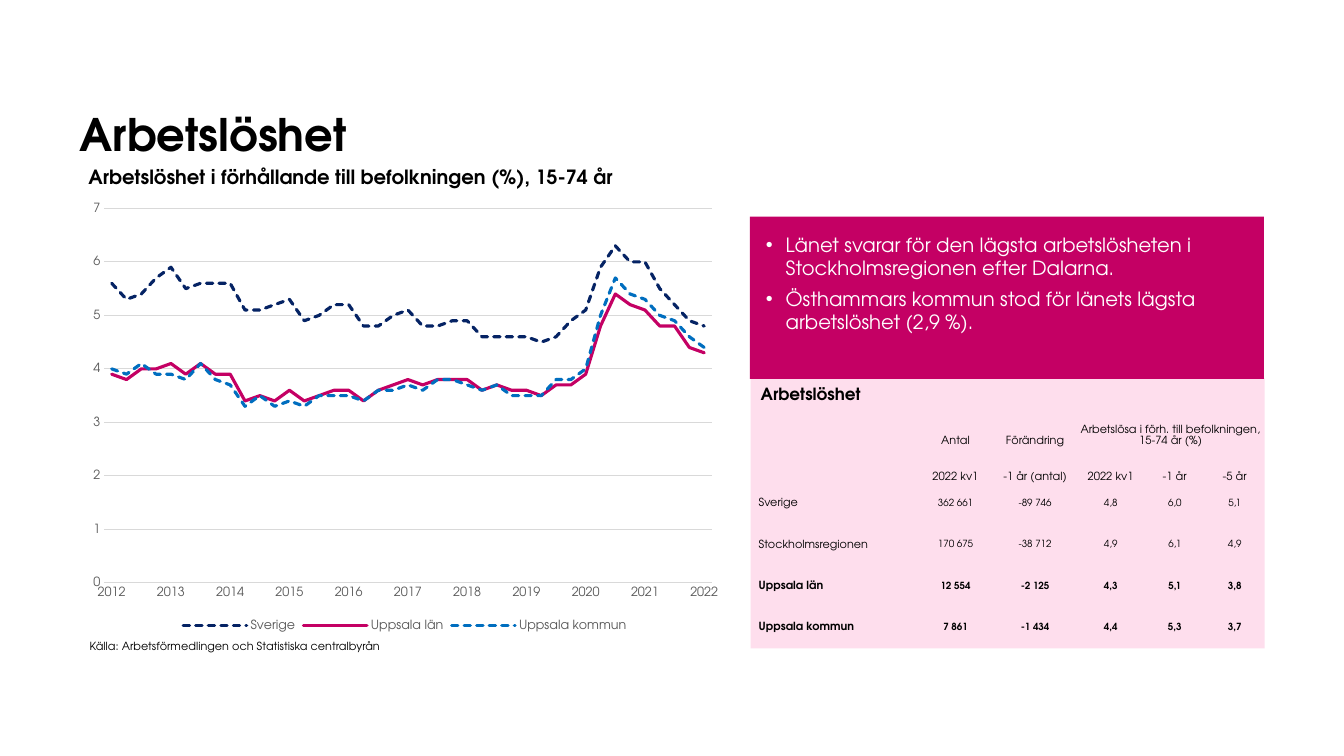
from pptx import Presentation
from pptx.chart.data import CategoryChartData
from pptx.dml.color import RGBColor
from pptx.enum.chart import XL_CHART_TYPE as ChartType, XL_LEGEND_POSITION as LegendPosition
from pptx.enum.chart import XL_TICK_MARK as TickMark
from pptx.enum.dml import MSO_LINE as Dash
from pptx.enum.shapes import MSO_SHAPE as Shape
from pptx.enum.text import MSO_ANCHOR as Anchor, PP_ALIGN as Align
from pptx.oxml import parse_xml
from pptx.oxml.ns import nsdecls, qn
from pptx.util import Cm, Pt

FONT = "TeX Gyre Adventor"
COLORS = {
    "black": "000000", "white": "FFFFFF", "grey": "595959", "grid": "D9D9D9",
    "magenta": "C40064", "pink": "FEDEED", "navy": "052364", "blue": "006EBF",
}


def style_font(font, size, color="black", bold=False):
    font.name = FONT
    font.size = Pt(size)
    font.bold = bold
    font.color.rgb = RGBColor.from_string(COLORS[color])


def add_label(left, top, width, height, text, size, bold=False):
    box = slide.shapes.add_textbox(Cm(left), Cm(top), Cm(width), Cm(height))
    box.text_frame.word_wrap = True
    box.text_frame.text = text
    style_font(box.text_frame.paragraphs[0].runs[0].font, size, bold=bold)
    return box.text_frame


presentation = Presentation()
presentation.slide_width = Cm(33.87)
presentation.slide_height = Cm(19.05)
slide = presentation.slides.add_slide(presentation.slide_layouts[6])

# Title
title = add_label(2.01, 0.94, 23.42, 3.1, "Arbetslöshet", 32, bold=True)
title.vertical_anchor = Anchor.BOTTOM
title.margin_left = title.margin_right = title.margin_top = title.margin_bottom = 0

# Panels: pink behind the table, magenta behind the bullets
panels = []
for left, top, height, color in [(18.92, 9.53, 6.81, "pink"), (18.9, 5.46, 4.09, "magenta")]:
    panel = slide.shapes.add_shape(Shape.RECTANGLE, Cm(left), Cm(top), Cm(12.95), Cm(height))
    panel.shadow.inherit = False
    panel.fill.solid()
    panel.fill.fore_color.rgb = RGBColor.from_string(COLORS[color])
    panel.line.fill.background()
    panels.append(panel)

# Bullets
bullets = [
    "Länet svarar för den lägsta arbetslösheten i Stockholmsregionen efter Dalarna.",
    "Östhammars kommun stod för länets lägsta arbetslöshet (2,9 %).",
]
frame = panels[1].text_frame
frame.word_wrap = True
frame.vertical_anchor = Anchor.TOP
frame.margin_left = frame.margin_right = frame.margin_top = frame.margin_bottom = Cm(0.4)
for index, text in enumerate(bullets):
    paragraph = frame.add_paragraph() if index else frame.paragraphs[0]
    paragraph.text = text
    paragraph.alignment = Align.LEFT
    paragraph.space_before = Pt(5 if index else 0)
    properties = paragraph._p.get_or_add_pPr()
    properties.set("marL", str(Cm(0.5)))
    properties.set("indent", str(-Cm(0.5)))
    properties.append(parse_xml(f'<a:buFont {nsdecls("a")} typeface="Arial"/>'))
    properties.append(parse_xml(f'<a:buChar {nsdecls("a")} char="•"/>'))
    style_font(paragraph.runs[0].font, 14, "white")

# Headings and source
add_label(18.92, 9.55, 4, 0.76, "Arbetslöshet", 12, bold=True)
add_label(1.98, 4.03, 15.5, 0.85,
          "Arbetslöshet i förhållande till befolkningen (%), 15-74 år", 14, bold=True)
add_label(2.01, 15.98, 9, 0.61, "Källa: Arbetsförmedlingen och Statistiska centralbyrån", 8)

# Table
rows = [
    ["", "Antal", "Förändring", "Arbetslösa i förh. till befolkningen, 15-74 år (%)", "", ""],
    ["", "2022 kv1", "-1 år (antal)", "2022 kv1", "-1 år", "-5 år"],
    ["Sverige", "362 661", "-89 746", "4,8", "6,0", "5,1"],
    ["Stockholmsregionen", "170 675", "-38 712", "4,9", "6,1", "4,9"],
    ["Uppsala län", "12 554", "-2 125", "4,3", "5,1", "3,8"],
    ["Uppsala kommun", "7 861", "-1 434", "4,4", "5,3", "3,7"],
]
column_widths = [4.22, 1.88, 2.13, 1.68, 1.55, 1.47]
table = slide.shapes.add_table(len(rows), len(column_widths), Cm(18.92), Cm(10.34),
                               Cm(12.93), Cm(5.98)).table
table.first_row = table.horz_banding = False
# Style without borders
table._tbl.tblPr.find(qn("a:tableStyleId")).text = "{2D5ABB26-0587-4C30-8999-92F81FD0307C}"
for column, width in zip(table.columns, column_widths):
    column.width = Cm(width)
table.cell(0, 3).merge(table.cell(0, 5))
for row_index, row in enumerate(rows):
    is_header = row_index < 2
    table.rows[row_index].height = Cm(0.91 if is_header else 1.04)
    for column_index, text in enumerate(row):
        cell = table.cell(row_index, column_index)
        cell.fill.background()
        cell.vertical_anchor = Anchor.BOTTOM if is_header else Anchor.MIDDLE
        cell.margin_left = Cm(0.03 if column_index else 0.2)
        cell.margin_right = cell.margin_top = Cm(0.03)
        cell.margin_bottom = 0
        if not text:
            continue
        cell.text_frame.text = text
        paragraph = cell.text_frame.paragraphs[0]
        paragraph.alignment = Align.CENTER if column_index else Align.LEFT
        size = 8 if is_header or column_index == 0 else 7
        style_font(paragraph.runs[0].font, size, bold=row_index >= 4)

# Chart: quarterly values, the first quarter of each year labelled
series_styles = [
    ("Sverige", "navy", Dash.SQUARE_DOT,
     [5.6, 5.3, 5.4, 5.7, 5.9, 5.5, 5.6, 5.6, 5.6, 5.1, 5.1, 5.2, 5.3, 4.9, 5, 5.2, 5.2, 4.8,
      4.8, 5, 5.1, 4.8, 4.8, 4.9, 4.9, 4.6, 4.6, 4.6, 4.6, 4.5, 4.6, 4.9, 5.1, 5.9, 6.3, 6, 6,
      5.5, 5.2, 4.9, 4.8]),
    ("Uppsala län", "magenta", None,
     [3.9, 3.8, 4, 4, 4.1, 3.9, 4.1, 3.9, 3.9, 3.4, 3.5, 3.4, 3.6, 3.4, 3.5, 3.6, 3.6, 3.4,
      3.6, 3.7, 3.8, 3.7, 3.8, 3.8, 3.8, 3.6, 3.7, 3.6, 3.6, 3.5, 3.7, 3.7, 3.9, 4.8, 5.4, 5.2,
      5.1, 4.8, 4.8, 4.4, 4.3]),
    ("Uppsala kommun", "blue", Dash.SQUARE_DOT,
     [4, 3.9, 4.1, 3.9, 3.9, 3.8, 4.1, 3.8, 3.7, 3.3, 3.5, 3.3, 3.4, 3.3, 3.5, 3.5, 3.5, 3.4,
      3.6, 3.6, 3.7, 3.6, 3.8, 3.8, 3.7, 3.6, 3.7, 3.5, 3.5, 3.5, 3.8, 3.8, 4, 5, 5.7, 5.4, 5.3,
      5, 4.9, 4.6, 4.4]),
]
chart_data = CategoryChartData()
chart_data.categories = ["" if quarter % 4 else str(2012 + quarter // 4) for quarter in range(41)]
for name, _, _, values in series_styles:
    chart_data.add_series(name, values)
chart = slide.shapes.add_chart(ChartType.LINE, Cm(1.97), Cm(4.92), Cm(16.46), Cm(11.1),
                               chart_data).chart
chart.has_title = False
style_font(chart.font, 10)
chart.plots[0].vary_by_categories = False
for series, (_, color, dash, _) in zip(chart.plots[0].series, series_styles):
    series.smooth = False
    line = series.format.line
    line.width = Pt(2.25)
    line.color.rgb = RGBColor.from_string(COLORS[color])
    if dash:
        line.dash_style = dash
    # Round line ends
    series._element.find(qn("c:spPr")).find(qn("a:ln")).set("cap", "rnd")

# Legend and axes
chart.has_legend = True
chart.legend.position = LegendPosition.BOTTOM
chart.legend.include_in_layout = False
style_font(chart.legend.font, 9, "grey")
category_axis, value_axis = chart.category_axis, chart.value_axis
for axis in (category_axis, value_axis):
    axis.major_tick_mark = axis.minor_tick_mark = TickMark.NONE
    style_font(axis.tick_labels.font, 9, "grey")
value_axis.minimum_scale, value_axis.maximum_scale, value_axis.major_unit = 0, 7, 1
value_axis.tick_labels.number_format = "0"
value_axis.tick_labels.number_format_is_linked = False
value_axis.format.line.fill.background()
for line in (category_axis.format.line, value_axis.major_gridlines.format.line):
    line.width = Pt(0.75)
    line.color.rgb = RGBColor.from_string(COLORS["grid"])

# Show every category label on one line (this angle means automatic)
label_skip = parse_xml(f'<c:tickLblSkip {nsdecls("c")} val="1"/>')
category_axis._element.find(qn("c:noMultiLvlLbl")).addprevious(label_skip)
category_axis._element.find(qn("c:txPr")).find(qn("a:bodyPr")).set("rot", "-60000000")

# Plot area position inside the chart
plot_area = chart._chartSpace.chart.plotArea
for layout in plot_area.findall(qn("c:layout")):
    plot_area.remove(layout)
plot_area.insert(0, parse_xml(
    f'<c:layout {nsdecls("c")}><c:manualLayout><c:layoutTarget val="inner"/>'
    '<c:xMode val="edge"/><c:yMode val="edge"/><c:x val="0.04"/><c:y val="0.03"/>'
    '<c:w val="0.93"/><c:h val="0.85"/></c:manualLayout></c:layout>'))

presentation.save("out.pptx")
